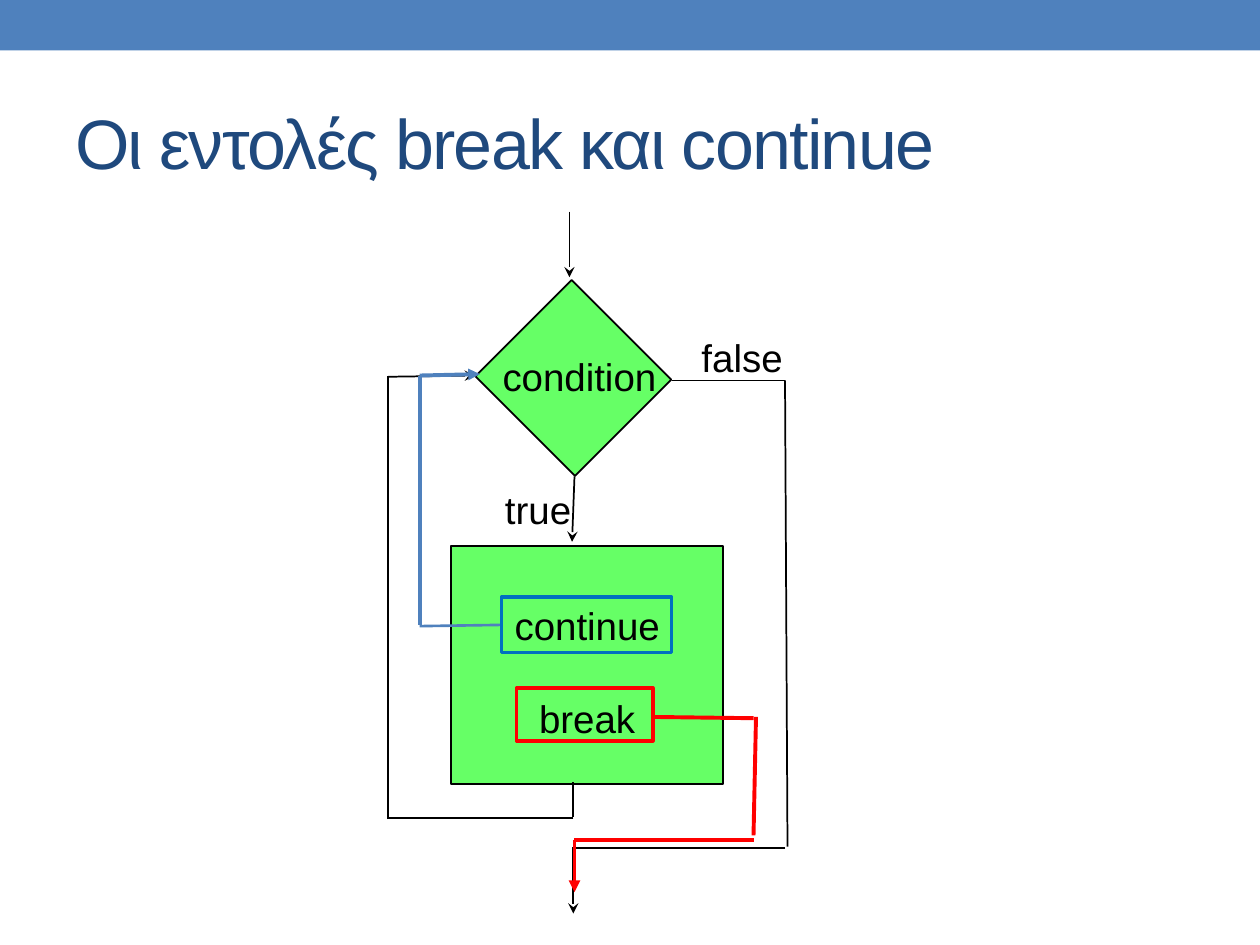
from pptx import Presentation
from pptx.dml.color import RGBColor
from pptx.enum.shapes import MSO_CONNECTOR, MSO_SHAPE
from pptx.enum.text import MSO_ANCHOR, PP_ALIGN
from pptx.oxml.ns import qn
from pptx.util import Pt
from lxml.etree import SubElement

COLORS = {
    "band": "4F81BD",
    "title": "1F497D",
    "node": "66FF66",
    "black": "000000",
    "continue": "0070C0",
    "break": "FF0000",
}
FONT = "Arial"
TEXT_SIZE = 22

LABELS = [
    ("condition", 280.1, 198, 103.7),
    ("false", 393.8, 187.2, 61.9),
    ("true", 281.5, 274.3, 53.3),
]

ROUTES = [
    ("black", 1, "stealth", [
        (325.4, 121, 325.4, 158.4),
        (328.3, 272.2, 326.9, 309.6),
        (221.8, 215.3, 271.4, 214.6),
        (327.6, 484.6, 327.6, 522),
    ]),
    ("black", 1, None, [
        (383.8, 217.4, 448.6, 217.4),
        (448.6, 217.4, 450, 483.8),
        (448.6, 484.6, 326.9, 484.6),
        (327.6, 447.1, 327.6, 466.6),
        (327.6, 467.3, 221.8, 467.3),
        (221.8, 468, 221.8, 214.6),
    ]),
    ("band", 1.5, None, [(286.6, 357.1, 239.8, 357.8)]),
    ("band", 2.25, None, [(239.8, 357.1, 239.8, 214.6)]),
    ("band", 2.25, "triangle", [(239.8, 214.6, 274.3, 213.8)]),
    ("break", 2.25, None, [
        (373.7, 409.7, 430.6, 410.4),
        (432, 409.7, 430.6, 477.4),
        (430.6, 480.2, 328.3, 480.2),
    ]),
    ("break", 2.25, "triangle", [(328.3, 480.2, 328.3, 509.8)]),
]


def color(name):
    return RGBColor.from_string(COLORS[name])


def format_runs(paragraph, size, color_name):
    for run in paragraph.runs:
        run.font.name = FONT
        run.font.size = Pt(size)
        run.font.color.rgb = color(color_name)


def add_box(slide, left, top, width, height, fill=None, line=None, weight=1):
    shape = slide.shapes.add_shape(
        MSO_SHAPE.RECTANGLE, Pt(left), Pt(top), Pt(width), Pt(height))
    shape.shadow.inherit = False
    if fill:
        shape.fill.solid()
        shape.fill.fore_color.rgb = color(fill)
    else:
        shape.fill.background()
    if line:
        shape.line.color.rgb = color(line)
        shape.line.width = Pt(weight)
    else:
        shape.line.fill.background()
    return shape


def add_label(slide, text, left, top, width, height=33.8,
              size=TEXT_SIZE, color_name="black"):
    label = slide.shapes.add_textbox(Pt(left), Pt(top), Pt(width), Pt(height))
    text_frame = label.text_frame
    text_frame.word_wrap = True
    text_frame.text = text
    format_runs(text_frame.paragraphs[0], size, color_name)
    return label


def add_title(slide, text):
    title = add_label(slide, text, 36, 41.8, 648, 77.8, 40, "title")
    title.text_frame.vertical_anchor = MSO_ANCHOR.MIDDLE
    for run in title.text_frame.paragraphs[0].runs:
        run.font._element.set("spc", "-100")


def add_loop_body(slide):
    body = add_box(slide, 257.8, 311.8, 155.5, 136.1, "node", "black")
    text_frame = body.text_frame
    text_frame.vertical_anchor = MSO_ANCHOR.TOP
    text_frame.margin_top = Pt(32)
    text_frame.text = "continue\nbreak"
    for paragraph in text_frame.paragraphs:
        paragraph.alignment = PP_ALIGN.CENTER
        format_runs(paragraph, TEXT_SIZE, "black")
    text_frame.paragraphs[1].space_before = Pt(27)


def add_line(slide, ends, color_name, weight, arrowhead=None):
    connector = slide.shapes.add_connector(
        MSO_CONNECTOR.STRAIGHT, *[Pt(value) for value in ends])
    connector.line.color.rgb = color(color_name)
    connector.line.width = Pt(weight)
    if arrowhead:
        SubElement(connector.line._get_or_add_ln(), qn("a:tailEnd"), type=arrowhead)
    SubElement(connector._element.spPr, qn("a:effectLst"))


def main():
    presentation = Presentation()
    presentation.slide_width = Pt(720)
    presentation.slide_height = Pt(540)
    slide = presentation.slides.add_slide(presentation.slide_layouts[6])

    add_box(slide, 0, 0, 720, 28.8, "band")
    add_title(slide, "Οι εντολές break και continue")
    add_loop_body(slide)
    diamond = add_box(slide, 287.3, 177.1, 80.6, 77.8, "node", "black")
    diamond.rotation = 45
    for label in LABELS:
        add_label(slide, *label)
    for color_name, weight, arrowhead, lines in ROUTES:
        for ends in lines:
            add_line(slide, ends, color_name, weight, arrowhead)
    add_box(slide, 286.6, 341.3, 97.2, 31.7, line="continue", weight=2.08)
    add_box(slide, 295.2, 393.1, 77.8, 30.2, line="break", weight=2.08)

    presentation.save("out.pptx")


if __name__ == "__main__":
    main()
